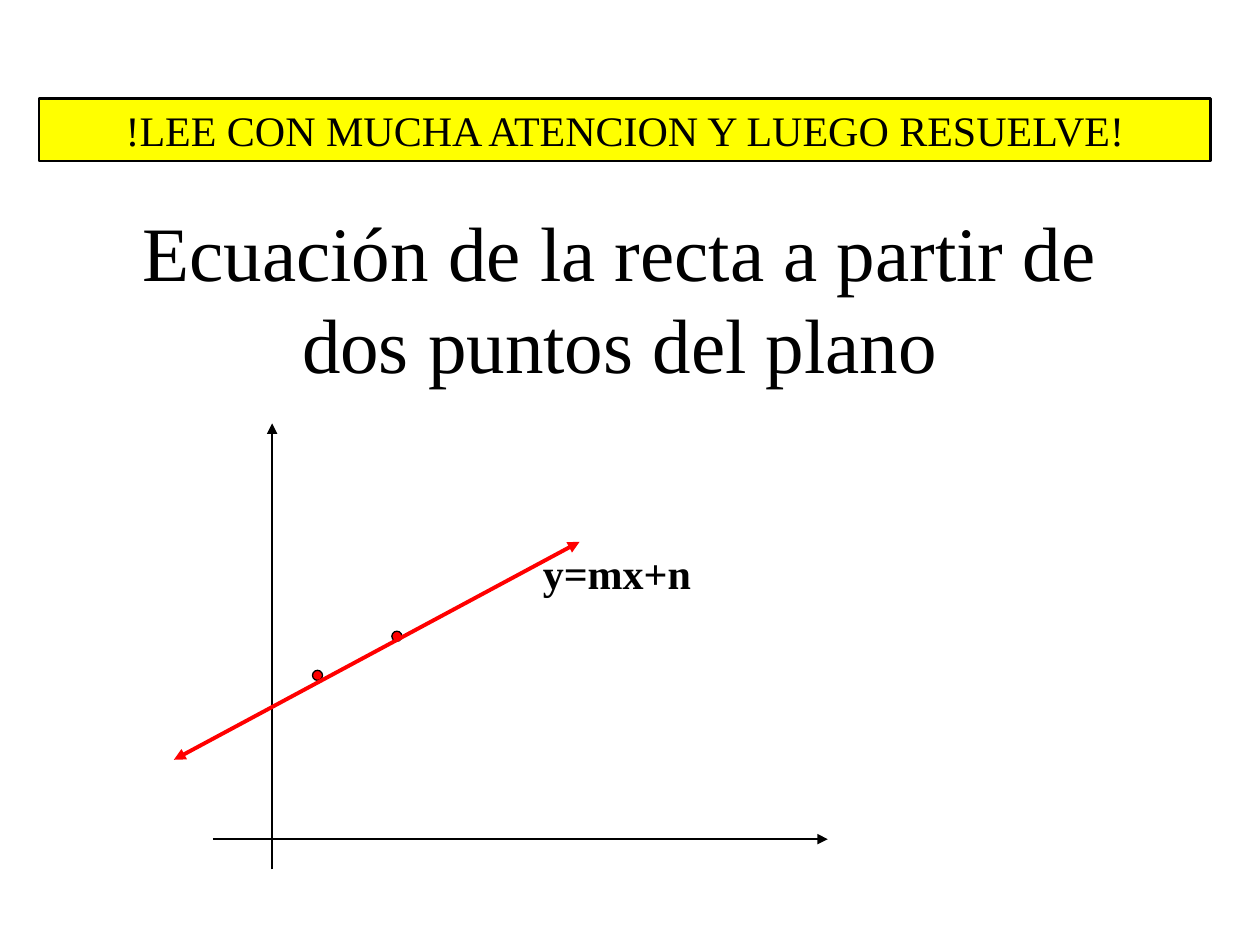
import pptx
import pptx.util
import pptx.dml.color
import pptx.enum.shapes
import pptx.enum.text
import pptx.oxml
import pptx.oxml.ns
from pptx.util import Inches

SHAPE = pptx.enum.shapes.MSO_SHAPE
ANCHOR = pptx.enum.text.MSO_ANCHOR
ALIGN = pptx.enum.text.PP_ALIGN


def color(hex_text):
    return pptx.dml.color.RGBColor.from_string(hex_text)


def write(sp, text, size=24, bold=False, align=ALIGN.CENTER, anchor=ANCHOR.TOP, wrap=True):
    tf = sp.text_frame
    tf.word_wrap = wrap
    tf.vertical_anchor = anchor
    p = tf.paragraphs[0]
    p.alignment = align
    r = p.add_run()
    r.text = text
    r.font.name = "Times New Roman"
    r.font.size = pptx.util.Pt(size)
    r.font.bold = bold
    r.font.color.rgb = color("000000")


prs = pptx.Presentation()
prs.slide_width = Inches(10)
prs.slide_height = Inches(7.5)
s = prs.slides.add_slide(prs.slide_layouts[5])

title = s.shapes.title
title.left, title.top = Inches(0.67), Inches(1.55)
title.width, title.height = Inches(8.5), Inches(1.61)
write(title, "Ecuación de la recta a partir de dos puntos del plano", size=44, anchor=ANCHOR.MIDDLE)

y_axis = (2.16, 6.9, 2.16, 3.36, "000000", 0.75, ["tailEnd"])
x_axis = (1.69, 6.66, 6.57, 6.66, "000000", 0.75, ["tailEnd"])
graph = (1.38, 6.03, 4.6, 4.3, "FF0000", 2.25, ["headEnd", "tailEnd"])

for x, y in [(3.11, 5.01), (2.48, 5.32)]:
    sp = s.shapes.add_shape(SHAPE.OVAL, Inches(x), Inches(y), Inches(0.08), Inches(0.08))
    sp.shadow.inherit = False
    sp.fill.solid()
    sp.fill.fore_color.rgb = color("FF0000")
    sp.line.color.rgb = color("000000")
    sp.line.width = pptx.util.Pt(0.75)

for x1, y1, x2, y2, line_color, width, ends in [y_axis, x_axis, graph]:
    cn = s.shapes.add_connector(
        pptx.enum.shapes.MSO_CONNECTOR.STRAIGHT, Inches(x1), Inches(y1), Inches(x2), Inches(y2))
    cn.line.color.rgb = color(line_color)
    cn.line.width = pptx.util.Pt(width)
    ln = cn.line._get_or_add_ln()
    for end in ends:
        arrow = pptx.oxml.parse_xml(f'<a:{end} {pptx.oxml.ns.nsdecls("a")} type="triangle"/>')
        ln.append(arrow)
    cn._element.spPr.append(pptx.oxml.parse_xml(f'<a:effectLst {pptx.oxml.ns.nsdecls("a")}/>'))

equation = s.shapes.add_textbox(Inches(4.21), Inches(4.3), Inches(1.5), Inches(0.5))
write(equation, "y=mx+n", bold=True, align=ALIGN.LEFT, wrap=False)

banner = s.shapes.add_shape(SHAPE.RECTANGLE, Inches(0.31), Inches(0.78), Inches(9.3), Inches(0.5))
banner.shadow.inherit = False
banner.fill.solid()
banner.fill.fore_color.rgb = color("FFFF00")
banner.line.color.rgb = color("000000")
banner.line.width = pptx.util.Pt(1.5)
write(banner, "!LEE CON MUCHA ATENCION Y LUEGO RESUELVE!")

prs.save("out.pptx")
